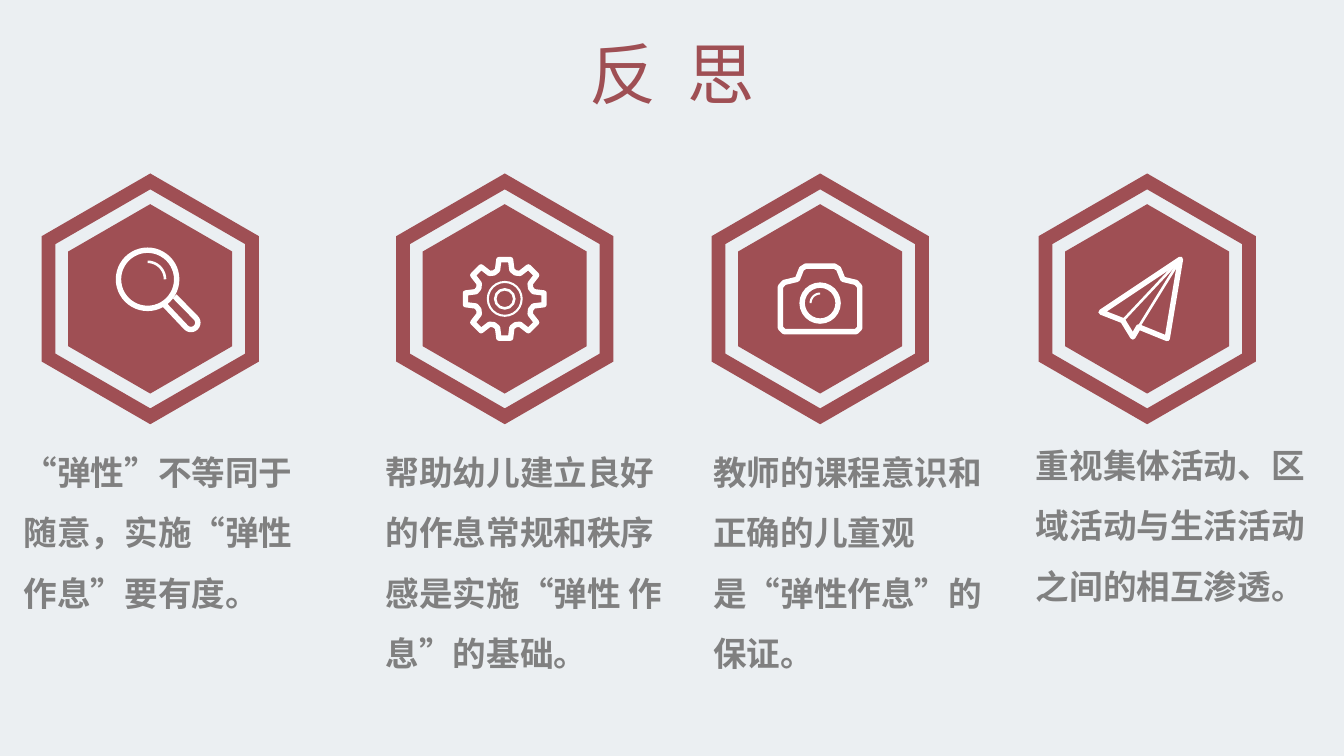
import math

from lxml import etree
from pptx import Presentation
from pptx import util as u
from pptx.dml.color import RGBColor
from pptx.enum import shapes, text
from pptx.oxml.ns import qn

BACKGROUND, RED, GREY, WHITE = "EBEFF2", "9F4F54", "808080", "FFFFFF"
CJK_FONT = "Noto Sans CJK SC"
THICK, MEDIUM, THIN = 2.9, 1.4, 1.1
CENTER_Y = 5.65


def color(value):
    return RGBColor.from_string(value)


def arc(x, y, radius, start, end, steps=12):
    """Points on a circle, with angles in degrees clockwise from the right."""
    angles = [math.radians(start + (end - start) * i / steps) for i in range(steps + 1)]
    return [(x + radius * math.cos(a), y + radius * math.sin(a)) for a in angles]


def hexagon(x, y, radius):
    return arc(x, y, radius, -90, 270, 6)


def write(frame, content, size, font, fill, bold=False, align=None, spacing=None):
    paragraph = frame.paragraphs[0]
    paragraph.alignment = align
    paragraph.line_spacing = spacing
    run = paragraph.add_run()
    run.text = content
    run.font.size = u.Pt(size)
    run.font.bold = bold
    run.font.color.rgb = color(fill)
    run.font.name = font
    properties = run._r.get_or_add_rPr()
    etree.SubElement(properties, qn("a:ea")).set("typeface", CJK_FONT)


class Deck:
    """Holds the style and the current slide; icon methods work around an origin."""

    def __init__(self, presentation):
        self.slide = presentation.slides.add_slide(presentation.slide_layouts[6])
        background = self.slide.background.fill
        background.solid()
        background.fore_color.rgb = color(BACKGROUND)
        self.origin = (0, 0)

    def place(self, x, y):
        return u.Cm(self.origin[0] + x), u.Cm(self.origin[1] + y)

    def paint(self, shape, fill=None, weight=None):
        shape.shadow.inherit = False
        if fill:
            shape.fill.solid()
            shape.fill.fore_color.rgb = color(fill)
        else:
            shape.fill.background()
        if weight:
            shape.line.color.rgb = color(WHITE)
            shape.line.width = u.Pt(weight)
        else:
            shape.line.fill.background()

    def outline(self, *contours, closed=True, **format):
        builder = self.slide.shapes.build_freeform(*self.place(*contours[0][0]))
        for index, contour in enumerate(contours):
            points = [self.place(*point) for point in contour]
            if index:
                builder.move_to(*points[0])
            builder.add_line_segments(points[1:], close=closed)
        self.paint(builder.convert_to_shape(), **format)

    def circle(self, x, y, radius, weight):
        shape = self.slide.shapes.add_shape(
            shapes.MSO_SHAPE.OVAL, *self.place(x - radius, y - radius),
            u.Cm(2 * radius), u.Cm(2 * radius))
        self.paint(shape, weight=weight)

    def line(self, start, end, weight):
        connector = self.slide.shapes.add_connector(
            shapes.MSO_CONNECTOR.STRAIGHT, *self.place(*start), *self.place(*end))
        connector.line.color.rgb = color(WHITE)
        connector.line.width = u.Pt(weight)
        etree.SubElement(connector._element.spPr, qn("a:effectLst"))

    def text_box(self, left, top, width, height, content, wrap=True, **format):
        box = self.slide.shapes.add_textbox(*map(u.Cm, (left, top, width, height)))
        box.text_frame.word_wrap = wrap
        box.text_frame.auto_size = text.MSO_AUTO_SIZE.SHAPE_TO_FIT_TEXT
        write(box.text_frame, content, **format)

    def badge(self):
        self.outline(hexagon(0, 0, 2.37), hexagon(0, 0, 2.07)[::-1], fill=RED)
        self.outline(hexagon(0, 0, 1.79), fill=RED)

    def magnifier(self):
        lens = (-0.05, -0.37)
        self.circle(*lens, 0.55, THICK)
        self.outline(arc(*lens, 0.33, -90, 0), closed=False, weight=MEDIUM)
        handle = [(0.27, 0.11), *arc(0.77, 0.45, 0.13, 135, -45), (0.46, -0.05)]
        self.outline(handle, closed=False, weight=THICK)

    def gear(self):
        tooth = [(-14, 0.56), (-8.5, 0.75), (8.5, 0.75), (14, 0.56), (22.5, 0.53)]
        rim = [arc(0, 0, radius, 45 * i + angle, 0)[0]
               for i in range(8) for angle, radius in tooth]
        self.outline(rim, weight=THICK)
        self.circle(0, 0, 0.32, THIN)
        self.circle(0, 0, 0.18, MEDIUM)

    def camera(self):
        right = [(0.27, -0.62), (0.35, -0.57), (0.43, -0.37), (0.68, -0.31),
                 (0.75, -0.23), (0.75, 0.55), (0.68, 0.62)]
        left = [(-x, y) for x, y in reversed(right)]
        self.outline(right + left, weight=THICK)
        self.circle(0, 0.08, 0.34, THICK)
        self.outline(arc(0, 0.08, 0.18, 180, 270), closed=False, weight=THIN)

    def paper_plane(self):
        tip, fold, keel = (0.63, -0.75), (-0.46, 0.41), (-0.16, 0.53)
        self.outline([tip, (-0.87, 0.25), fold, (-0.27, 0.72), keel, (0.38, 0.75)],
                     weight=THICK)
        for end in (fold, keel):
            self.line(tip, end, MEDIUM)


def main():
    presentation = Presentation()
    presentation.slide_width = u.Cm(25.4)
    presentation.slide_height = u.Cm(14.29)
    deck = Deck(presentation)
    deck.text_box(10.52, 0.48, 4.37, 1.8, "反  思", wrap=False, size=36,
                  font=CJK_FONT, fill=RED, align=text.PP_ALIGN.CENTER)

    # Icon, badge centre, then left, top, width and height of the text
    columns = [
        (deck.magnifier, 2.84, (0.2, 8.03, 5.59, 3.58),
         "“弹性”不等同于随意，实施“弹性作息”要有度。"),
        (deck.gear, 9.54, (7.04, 8.03, 5.89, 4.88),
         "帮助幼儿建立良好的作息常规和秩序感是实施“弹性 作息”的基础。"),
        (deck.camera, 15.5, (13.23, 8.03, 5.89, 3.71),
         "教师的课程意识和正确的儿童观是“弹性作息”的保证。"),
        (deck.paper_plane, 21.68, (19.33, 7.9, 6.07, 3.71),
         "重视集体活动、区域活动与生活活动之间的相互渗透。"),
    ]
    for draw_icon, center_x, area, content in columns:
        deck.origin = (center_x, CENTER_Y)
        deck.badge()
        draw_icon()
        deck.text_box(*area, content, size=18, font="Calibri", fill=GREY,
                      bold=True, spacing=1.5)
    presentation.save("out.pptx")


if __name__ == "__main__":
    main()
